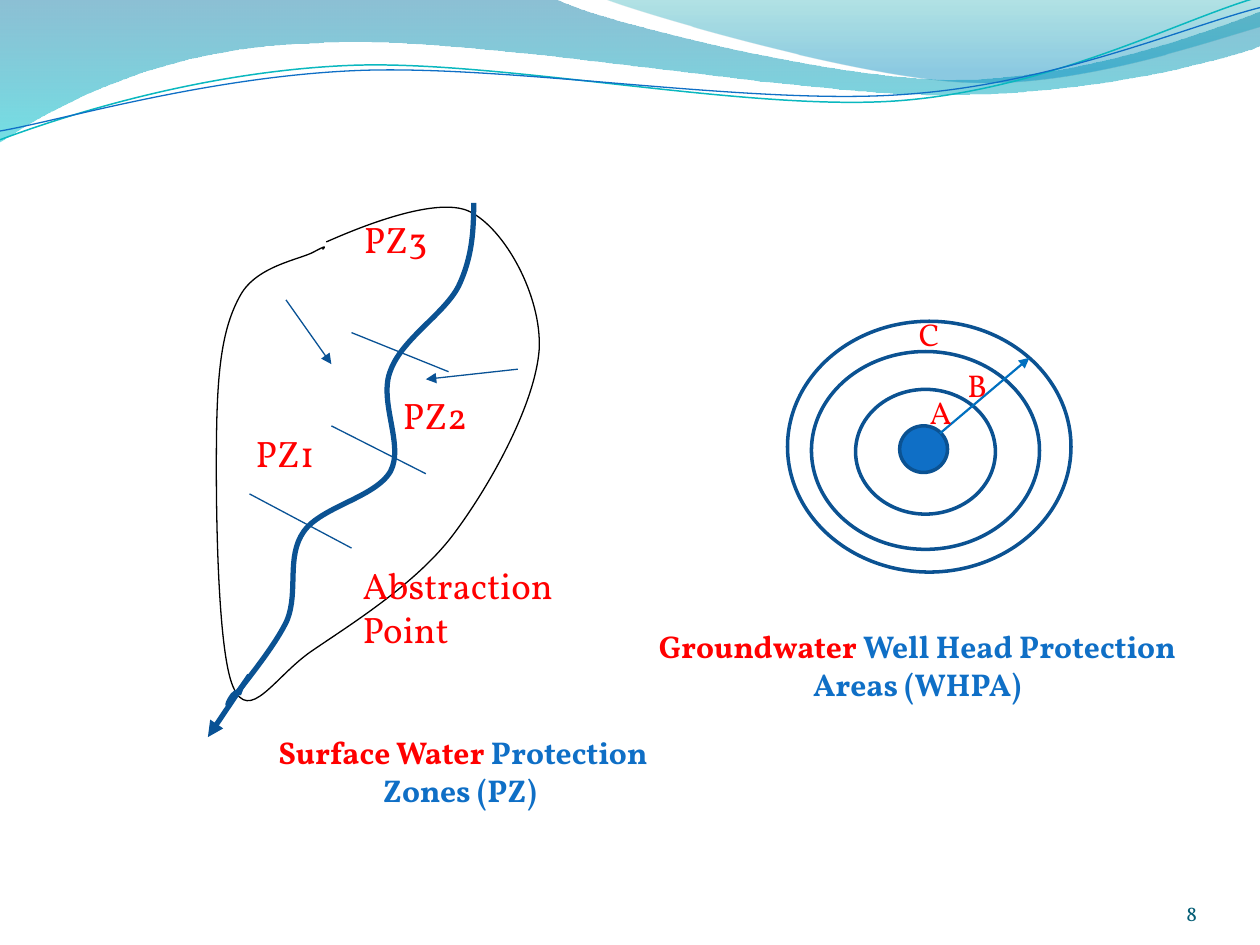
"""Build a slide on surface water protection zones and well head protection areas."""
from math import cos, radians, sin
from pptx import Presentation
from pptx.dml.color import RGBColor
from pptx.enum.shapes import MSO_CONNECTOR as Connector, MSO_SHAPE as Shape
from pptx.enum.text import MSO_ANCHOR as Anchor, PP_ALIGN as Align
from pptx.oxml.ns import qn
from pptx.util import Inches, Pt
from lxml.etree import SubElement

FONT = "Vollkorn"
RED, BLUE, NAVY, ARROW_BLUE = "FF0000", "0F6FC6", "0B5292", "095295"
color = RGBColor.from_string


def add_outline(shapes, bounds, start, segments, closed=False, rotation=0):
    """Draw straight (x, y) and cubic (x1, y1, x2, y2, x, y) segments in a frame."""
    left, top, width, height = bounds
    builder = shapes.build_freeform(Inches(left), Inches(top))
    builder.add_line_segments([(Inches(left + width), Inches(top + height))], close=False)
    outline = builder.convert_to_shape()
    outline.shadow.inherit = False
    outline.rotation = rotation
    turn = radians(-rotation)
    route = next(outline._element.iter(qn("a:path")))
    for node in list(route):
        route.remove(node)
    for index, values in enumerate([start, *segments]):
        tag = "a:moveTo" if index == 0 else "a:lnTo" if len(values) == 2 else "a:cubicBezTo"
        command = SubElement(route, qn(tag))
        for x, y in zip(values[::2], values[1::2]):
            dx, dy = x - left - width / 2, y - top - height / 2
            point = SubElement(command, qn("a:pt"))
            point.set("x", str(int(Inches(width / 2 + dx * cos(turn) - dy * sin(turn)))))
            point.set("y", str(int(Inches(height / 2 + dx * sin(turn) + dy * cos(turn)))))
    if closed:
        SubElement(route, qn("a:close"))
    return outline


def style_line(line, hex_color, width):
    """Set the colour and the width in points of a line."""
    line.color.rgb = color(hex_color)
    line.width = Pt(width)


deck = Presentation()
deck.slide_width, deck.slide_height = Inches(10), Inches(7.5)
page = deck.slides.add_slide(deck.slide_layouts[6])
shapes = page.shapes

waves = [
    ((-0.01, -0.01, 10.02, 1.14), (0, 0), [
        (4.4, -0.01), (4.76, 0.17, 6.64, 0.63, 7.58, 0.63), (8.53, 0.63, 9.58, 0.26, 10, 0.09),
        (10.01, 0.36), (9.83, 0.44, 8.7, 0.76, 7.46, 0.75), (6.22, 0.75, 3.82, 0.28, 2.57, 0.34),
        (1.29, 0.36, 0.46, 0.83, -0.01, 1.13), (0, 0)],
     [(0, "0074A1", 45), (1, "00C6CF", 55)]),
    ((4.79, -0.01, 5.21, 0.7), (4.79, -0.01), [
        (5.09, 0.11, 6.82, 0.62, 7.69, 0.65), (8.56, 0.69, 9.61, 0.32, 10, 0.21),
        (10, 0), (4.79, -0.01)],
     [(0, "00A1A9", 30), (0.8, "008BBF", 45)]),
]
for bounds, start, segments, stops in waves:
    wave = add_outline(shapes, bounds, start, segments, closed=True)
    wave.line.fill.background()
    wave.fill.gradient()
    wave.fill.gradient_angle = 270
    for stop, (position, hex_color, _) in zip(wave.fill.gradient_stops, stops):
        stop.position = position
        stop.color.rgb = color(hex_color)
    for node, (_, _, opacity) in zip(wave._element.spPr.iter(qn("a:srgbClr")), stops):
        SubElement(node, qn("a:alpha")).set("val", str(opacity * 1000))

curves = [
    ((-0.02, 0.22, 10.02, 0.71), 357.3, (0, 1.11), [
        (0.48, 0.93, 1.58, 0.57, 2.77, 0.52), (3.95, 0.47, 5.93, 0.89, 7.13, 0.8),
        (8.33, 0.71, 9.38, 0.15, 9.98, -0.02)], "0AB8BF", 0.85),
    ((-0.02, 0.3, 10.03, 0.58), 357.3, (0, 1.04), [
        (0.47, 0.96, 1.64, 0.61, 2.83, 0.56), (4.03, 0.51, 5.97, 0.84, 7.17, 0.75),
        (8.36, 0.67, 9.41, 0.21, 10, 0.06)], BLUE, 0.75),
    ((1.72, 1.64, 2.56, 3.92), 0, (2.56, 1.98), [
        (2.58, 1.96, 2.6, 1.94, 2.49, 2), (2.38, 2.06, 2.04, 2.11, 1.91, 2.34),
        (1.78, 2.57, 1.73, 2.86, 1.72, 3.38), (1.71, 3.9, 1.72, 5.15, 1.85, 5.45),
        (1.98, 5.75, 2.18, 5.37, 2.47, 5.17), (2.76, 4.97, 3.3, 4.64, 3.6, 4.24),
        (3.9, 3.84, 4.25, 3.2, 4.28, 2.77), (4.3, 2.35, 4.01, 1.82, 3.73, 1.68),
        (3.45, 1.54, 2.75, 1.85, 2.59, 1.92)], "000000", 0.75),
    ((1.81, 1.61, 1.95, 3.99), 0, (3.76, 1.61), [
        (3.76, 1.82, 3.75, 2.04, 3.64, 2.27), (3.53, 2.49, 3.19, 2.69, 3.1, 2.94),
        (3, 3.18, 3.21, 3.53, 3.1, 3.74), (2.98, 3.95, 2.55, 4.02, 2.41, 4.22),
        (2.27, 4.42, 2.37, 4.69, 2.28, 4.92), (2.18, 5.14, 1.89, 5.48, 1.83, 5.57),
        (1.77, 5.67, 1.85, 5.44, 1.92, 5.5)], NAVY, 3),
]
for bounds, rotation, start, segments, hex_color, width in curves:
    curve = add_outline(shapes, bounds, start, segments, rotation=rotation)
    curve.fill.background()
    style_line(curve.line, hex_color, width)

rings = [
    (6.79, 3.09, 1.11, 0.99),
    (6.44, 2.79, 1.81, 1.57),
    (6.25, 2.55, 2.25, 1.99),
    (7.14, 3.38, 0.38, 0.37),
]
for bounds in rings:
    ring = shapes.add_shape(Shape.OVAL, *map(Inches, bounds))
    ring.shadow.inherit = False
    ring.fill.background()
    style_line(ring.line, NAVY, 2)
well = ring
well.fill.solid()
well.fill.fore_color.rgb = color(BLUE)

flow_lines = [
    (2.27, 2.38, 2.63, 2.89, ARROW_BLUE, 0.75, True),
    (4.11, 2.93, 3.38, 3.01, ARROW_BLUE, 0.75, True),
    (1.98, 5.36, 1.65, 5.85, ARROW_BLUE, 3, True),
    (1.98, 3.92, 2.79, 4.35, ARROW_BLUE, 0.75, False),
    (2.63, 3.38, 3.38, 3.76, ARROW_BLUE, 0.75, False),
    (2.79, 2.64, 3.56, 2.95, ARROW_BLUE, 0.75, False),
    (7.46, 3.44, 8.17, 2.84, "0070C0", 1.25, True),
]
for *ends, hex_color, width, has_arrow in flow_lines:
    connector = shapes.add_connector(Connector.STRAIGHT, *map(Inches, ends))
    style_line(connector.line, hex_color, width)
    properties = connector._element.spPr
    if has_arrow:
        SubElement(properties.find(qn("a:ln")), qn("a:tailEnd")).set("type", "triangle")
    SubElement(properties, qn("a:effectLst"))

texts = [
    ((2.78, 4.42, 2.34, 0.81), [("Abstraction Point", RED)], 21, Align.LEFT, False),
    ((1.93, 3.37, 0.8, 0.45), [("PZ1", RED)], 21, Align.LEFT, False),
    ((3.1, 3.07, 0.8, 0.45), [("PZ2", RED)], 21, Align.LEFT, False),
    ((2.79, 1.67, 0.8, 0.45), [("PZ3", RED)], 21, Align.LEFT, False),
    ((7.24, 3.07, 0.45, 0.4), [("A", RED)], 18, Align.CENTER, False),
    ((7.53, 2.86, 0.45, 0.4), [("B", RED)], 18, Align.CENTER, False),
    ((7.15, 2.45, 0.45, 0.4), [("C", RED)], 18, Align.CENTER, False),
    ((1.76, 5.77, 3.83, 0.71),
     [("Surface Water ", RED), ("Protection Zones (PZ) ", BLUE)], 18, Align.CENTER, True),
    ((4.92, 4.93, 4.72, 0.71),
     [("Groundwater ", RED), ("Well Head Protection Areas (WHPA)", BLUE)], 18, Align.CENTER, True),
    ((8.67, 6.95, 0.83, 0.4), [("8", "045D75")], 12, Align.RIGHT, False),
]
for bounds, spans, size, alignment, bold in texts:
    box = shapes.add_textbox(*map(Inches, bounds))
    frame = box.text_frame
    frame.word_wrap = True
    para = frame.paragraphs[0]
    para.alignment = alignment
    for text, hex_color in spans:
        span = para.add_run()
        span.text = text
        span.font.name = FONT
        span.font.size = Pt(size)
        span.font.bold = bold
        span.font.color.rgb = color(hex_color)
page_number = frame
page_number.vertical_anchor = Anchor.BOTTOM
page_number.margin_left = page_number.margin_right = 0
page_number.margin_top = page_number.margin_bottom = 0

deck.save("out.pptx")
